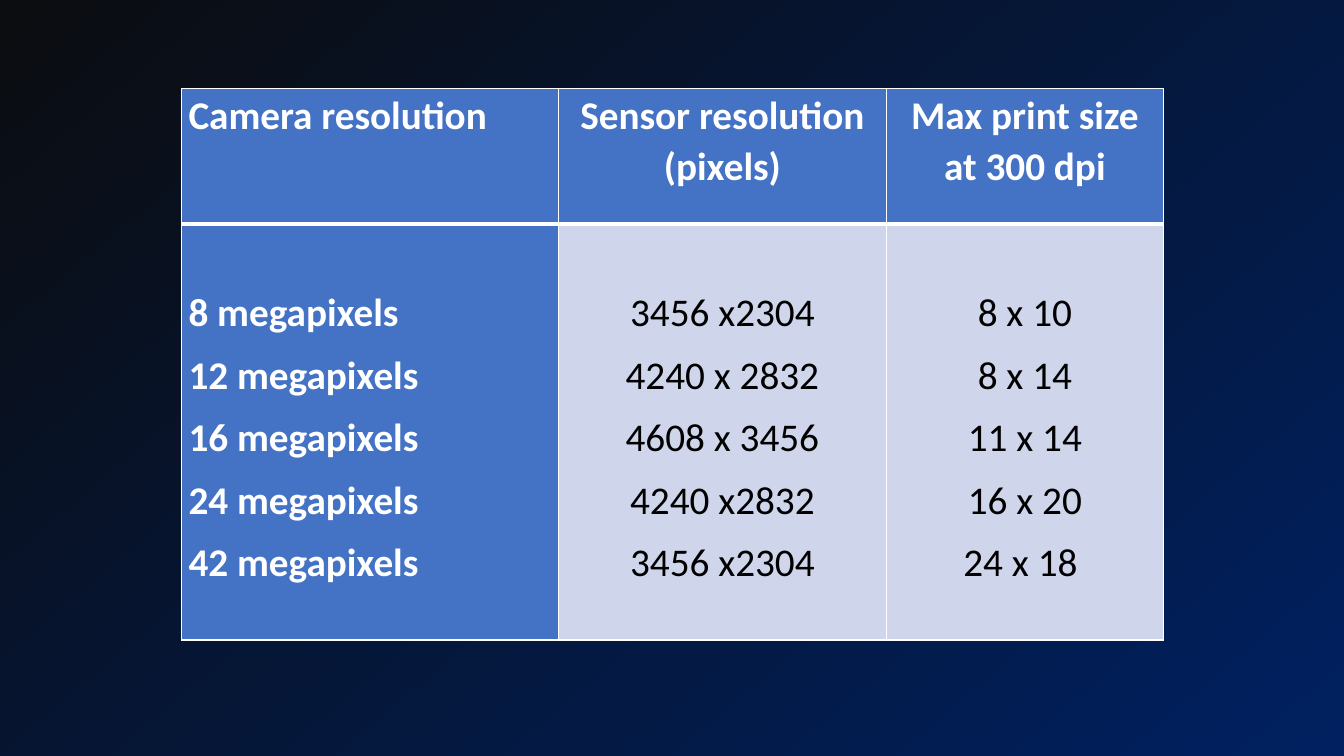
from dataclasses import dataclass

from lxml import etree
from pptx import Presentation
from pptx.dml.color import RGBColor
from pptx.enum.text import PP_ALIGN
from pptx.oxml.ns import qn
from pptx.slide import Slide
from pptx.table import Table, _Cell
from pptx.util import Inches, Pt

LEFT = PP_ALIGN.LEFT
CENTER = PP_ALIGN.CENTER
WHITE = RGBColor(0xFF, 0xFF, 0xFF)
BLACK = RGBColor(0x00, 0x00, 0x00)
BLUE = RGBColor(0x44, 0x72, 0xC4)
PALE_BLUE = RGBColor(0xCF, 0xD5, 0xEA)
NIGHT = RGBColor(0x0B, 0x0D, 0x10)
NAVY = RGBColor(0x00, 0x20, 0x60)

FONT = "Calibri"
ROW_HEIGHTS = (1.34, 4.13)
SIDE_MARGIN = 0.07
BODY_TOP_MARGIN = 0.62
THIN, THICK = 1, 3


@dataclass(frozen=True)
class CellStyle:
    fill: RGBColor
    text: RGBColor
    bold: bool


@dataclass(frozen=True)
class Column:
    width: float
    heading: str
    values: tuple[str, ...]
    alignment: PP_ALIGN
    body: CellStyle


STRONG = CellStyle(BLUE, WHITE, True)
PLAIN = CellStyle(PALE_BLUE, BLACK, False)

COLUMNS = (
    Column(3.74, "Camera resolution",
           tuple(f"{count} megapixels" for count in (8, 12, 16, 24, 42)),
           LEFT, STRONG),
    Column(3.25, "Sensor resolution (pixels)",
           ("3456 x2304", "4240 x 2832", "4608 x 3456", "4240 x2832", "3456 x2304"),
           CENTER, PLAIN),
    Column(2.75, "Max print size at 300 dpi",
           ("8 x 10", "8 x 14", "11 x 14", "16 x 20", "24 x 18 "),
           CENTER, PLAIN),
)


def paint_background(slide: Slide) -> None:
    fill = slide.background.fill
    fill.gradient()
    fill.gradient_angle = 310
    for stop, color in zip(fill.gradient_stops, (NIGHT, NAVY)):
        stop.color.rgb = color


def set_borders(cell: _Cell, top: int, bottom: int) -> None:
    properties = cell._tc.get_or_add_tcPr()
    widths = {"a:lnL": THIN, "a:lnR": THIN, "a:lnT": top, "a:lnB": bottom}
    for index, (tag, width) in enumerate(widths.items()):
        line = etree.Element(qn(tag), w=str(Pt(width)))
        fill = etree.SubElement(line, qn("a:solidFill"))
        etree.SubElement(fill, qn("a:srgbClr"), val=str(WHITE))
        properties.insert(index, line)


def fill_cell(cell: _Cell, lines: tuple[str, ...], alignment: PP_ALIGN,
              style: CellStyle, top_margin: float = 0) -> None:
    cell.fill.solid()
    cell.fill.fore_color.rgb = style.fill
    cell.margin_left = cell.margin_right = Inches(SIDE_MARGIN)
    cell.margin_top = Inches(top_margin)
    cell.margin_bottom = 0
    frame = cell.text_frame
    for index, text in enumerate(lines):
        paragraph = frame.add_paragraph() if index else frame.paragraphs[0]
        paragraph.alignment = alignment
        paragraph.line_spacing = 1.07
        paragraph.space_after = Pt(8)
        run = paragraph.add_run()
        run.text = text
        run.font.name = FONT
        run.font.size = Pt(28)
        run.font.bold = style.bold
        run.font.color.rgb = style.text


def add_resolution_table(slide: Slide) -> Table:
    width = sum(column.width for column in COLUMNS)
    table = slide.shapes.add_table(
        len(ROW_HEIGHTS), len(COLUMNS), Inches(1.8), Inches(0.88),
        Inches(width), Inches(sum(ROW_HEIGHTS))).table
    table.horz_banding = False
    table.first_col = True
    for row, height in zip(table.rows, ROW_HEIGHTS):
        row.height = Inches(height)
    for index, column in enumerate(COLUMNS):
        table.columns[index].width = Inches(column.width)
        header, body = table.cell(0, index), table.cell(1, index)
        fill_cell(header, (column.heading,), column.alignment, STRONG)
        fill_cell(body, column.values, column.alignment, column.body, BODY_TOP_MARGIN)
        set_borders(header, THIN, THICK)
        set_borders(body, THICK, THIN)
    return table


def main() -> None:
    presentation = Presentation()
    presentation.slide_width = Inches(13.33)
    presentation.slide_height = Inches(7.5)
    slide = presentation.slides.add_slide(presentation.slide_layouts[6])
    paint_background(slide)
    add_resolution_table(slide)
    presentation.save("out.pptx")


if __name__ == "__main__":
    main()
